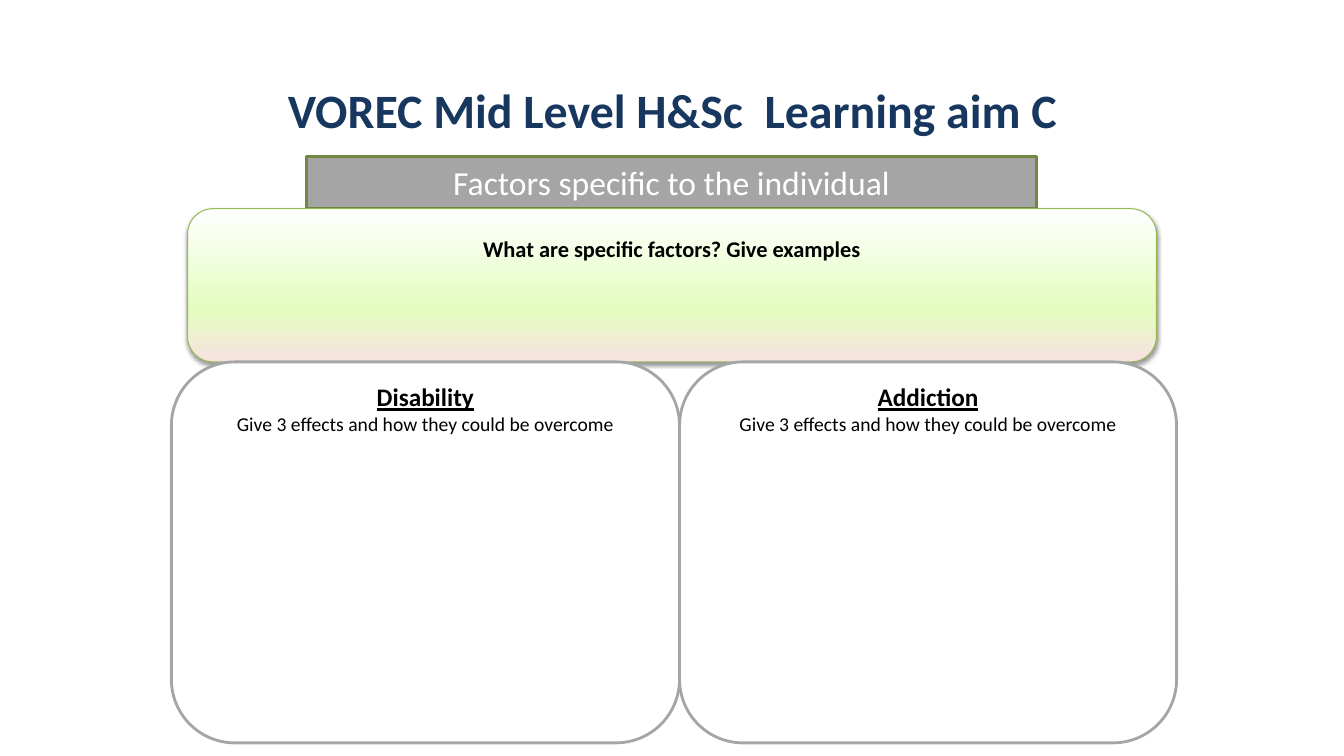
from copy import deepcopy
from dataclasses import dataclass

from lxml.etree import SubElement
from pptx import Presentation
from pptx.dml.color import RGBColor
from pptx.enum.shapes import MSO_SHAPE
from pptx.enum.text import MSO_ANCHOR, PP_ALIGN
from pptx.oxml.ns import qn
from pptx.shapes.autoshape import Shape
from pptx.slide import Slide
from pptx.util import Inches, Pt


@dataclass(frozen=True)
class Theme:
    font: str = "Calibri"
    navy: str = "17375E"
    gray: str = "A5A5A5"
    olive: str = "718841"
    green: str = "98B955"
    white: str = "FFFFFF"
    black: str = "000000"
    fade: tuple[tuple[float, str], ...] = (
        (0, "F7E2E2"), (0.35, "E4FDBF"), (1, "FFFFFF"))
    title: float = 34.2
    banner: float = 24
    head: float = 18
    prompt: float = 16
    body: float = 14


THEME = Theme()


@dataclass(frozen=True)
class Line:
    text: str
    size: float
    color: str = THEME.black
    bold: bool = False
    under: bool = False


@dataclass(frozen=True)
class Box:
    left: float
    top: float
    width: float
    height: float
    lines: tuple[Line, ...]
    fill: str = THEME.white
    edge: str = THEME.gray
    weight: float = 2
    kind: MSO_SHAPE = MSO_SHAPE.ROUNDED_RECTANGLE
    anchor: MSO_ANCHOR = MSO_ANCHOR.TOP
    inset: float = 0.01


def panel(left: float, width: float, head: str) -> Box:
    return Box(left, 3.59, width, 3.78, (
        Line(head, THEME.head, bold=True, under=True),
        Line("Give 3 effects and how they could be overcome", THEME.body)))


TITLE = Line("VOREC Mid Level H&Sc  Learning aim C", THEME.title,
             THEME.navy, bold=True)
BANNER = Box(3.04, 1.55, 7.24, 0.52,
             (Line("Factors specific to the individual", THEME.banner,
                   THEME.white),),
             THEME.gray, THEME.olive, kind=MSO_SHAPE.RECTANGLE,
             anchor=MSO_ANCHOR.MIDDLE, inset=0.05)
PROMPT = Box(1.86, 2.07, 9.61, 1.52,
             (Line("What are specific factors? Give examples", THEME.prompt,
                   bold=True),),
             edge=THEME.green, weight=0.75, inset=0.19)
PANELS = (panel(1.7, 5.04, "Disability"), panel(6.74, 4.93, "Addiction"))


def write(shape: Shape, lines: tuple[Line, ...], anchor: MSO_ANCHOR,
          inset: float) -> None:
    frame = shape.text_frame
    frame.word_wrap = True
    frame.vertical_anchor = anchor
    frame.margin_left = frame.margin_right = Inches(0.05)
    frame.margin_top = Inches(inset)
    frame.margin_bottom = Inches(0.05)
    frame.text = "\n".join(line.text for line in lines)
    for para, line in zip(frame.paragraphs, lines):
        para.alignment = PP_ALIGN.CENTER
        font = para.runs[0].font
        font.name = THEME.font
        font.size = Pt(line.size)
        font.bold = line.bold
        font.underline = line.under
        font.color.rgb = RGBColor.from_string(line.color)


def draw(slide: Slide, box: Box) -> Shape:
    shape = slide.shapes.add_shape(
        box.kind, Inches(box.left), Inches(box.top),
        Inches(box.width), Inches(box.height))
    shape.shadow.inherit = False
    shape.fill.solid()
    shape.fill.fore_color.rgb = RGBColor.from_string(box.fill)
    shape.line.color.rgb = RGBColor.from_string(box.edge)
    shape.line.width = Pt(box.weight)
    write(shape, box.lines, box.anchor, box.inset)
    return shape


def fade(shape: Shape) -> None:
    """Fill the shape with the theme's gradient, running upwards."""
    fill = shape.fill
    fill.gradient()
    fill.gradient_angle = 90
    stops = next(shape.element.iter(qn("a:gsLst")))
    while len(stops) < len(THEME.fade):
        stops.append(deepcopy(stops[0]))
    for stop, (place, color) in zip(fill.gradient_stops, THEME.fade):
        stop.position = place
        stop.color.rgb = RGBColor.from_string(color)


def shade(shape: Shape) -> None:
    """Add a soft shadow below the shape."""
    effects = shape.element.spPr.find(qn("a:effectLst"))
    outer = SubElement(effects, qn("a:outerShdw"), blurRad=str(Pt(3)),
                       dist=str(Pt(1.6)), dir="5400000", rotWithShape="0")
    color = SubElement(outer, qn("a:srgbClr"), val=THEME.black)
    SubElement(color, qn("a:alpha"), val="38000")


def main() -> None:
    deck = Presentation()
    deck.slide_width = Inches(13.33)
    deck.slide_height = Inches(7.5)
    slide = deck.slides.add_slide(deck.slide_layouts[6])

    title = slide.shapes.add_textbox(
        Inches(0.92), Inches(0.4), Inches(11.5), Inches(1.45))
    write(title, (TITLE,), MSO_ANCHOR.MIDDLE, 0.05)
    title.text_frame.paragraphs[0].line_spacing = 0.9

    draw(slide, BANNER)
    prompt = draw(slide, PROMPT)
    fade(prompt)
    shade(prompt)
    for box in PANELS:
        draw(slide, box)
    deck.save("out.pptx")


if __name__ == "__main__":
    main()
